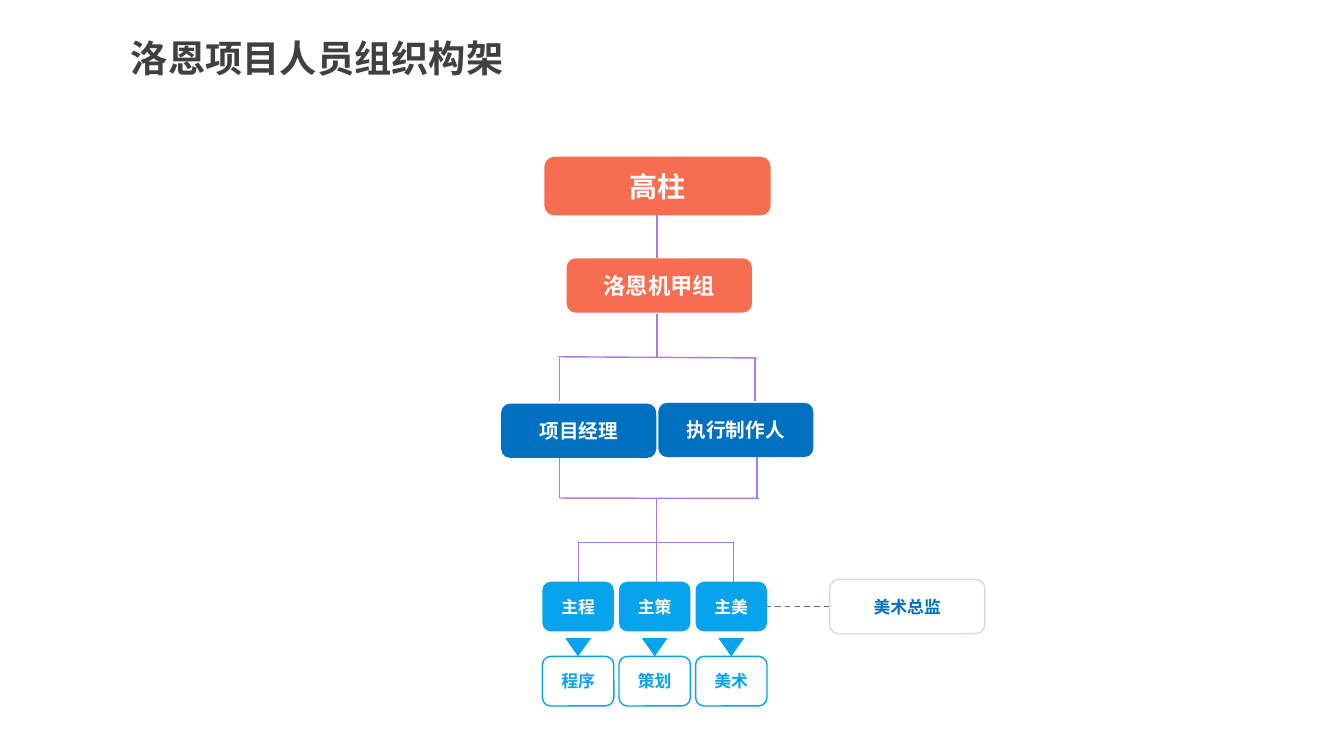
from lxml.etree import SubElement
from pptx import Presentation
from pptx.dml.color import RGBColor
from pptx.enum.dml import MSO_LINE
from pptx.enum.shapes import MSO_CONNECTOR, MSO_SHAPE
from pptx.enum.text import MSO_ANCHOR, PP_ALIGN
from pptx.oxml.ns import qn
from pptx.util import Cm, Pt

ORANGE, BLUE, SKY, PURPLE = "F66E4F", "0070C0", "08A3ED", "AD7AE1"
WHITE, GREY, STEEL, DARK = "FFFFFF", "D6DCE5", "43739E", "404040"


def color(hex_code):
    return RGBColor.from_string(hex_code)


def write(frame, text, size=12, ink=WHITE, font="Calibri", align=PP_ALIGN.CENTER):
    paragraph = frame.paragraphs[0]
    paragraph.alignment = align
    run = paragraph.add_run()
    run.text = text
    run.font.name = font
    run.font.size = Pt(size)
    run.font.bold = True
    run.font.color.rgb = color(ink)


class OrgChart:
    def __init__(self, slide):
        self.shapes = slide.shapes
        self.line_width = Pt(1)

    def paint(self, shape, fill=None, outline=None):
        shape.shadow.inherit = False
        if fill:
            shape.fill.solid()
            shape.fill.fore_color.rgb = color(fill)
        else:
            shape.fill.background()
        if outline:
            shape.line.color.rgb = color(outline)
            shape.line.width = self.line_width
        else:
            shape.line.fill.background()

    def title(self, text, left, top, width, height):
        frame = self.shapes.add_textbox(Cm(left), Cm(top), Cm(width), Cm(height)).text_frame
        frame.word_wrap = False
        write(frame, text, 26.6, DARK, "Noto Sans CJK SC", PP_ALIGN.LEFT)

    def box(self, text, left, top, width, height, fill=None, outline=None, **text_format):
        shape = self.shapes.add_shape(
            MSO_SHAPE.ROUNDED_RECTANGLE, Cm(left), Cm(top), Cm(width), Cm(height))
        self.paint(shape, fill, outline)
        frame = shape.text_frame
        frame.word_wrap = True
        frame.vertical_anchor = MSO_ANCHOR.MIDDLE
        frame.margin_left = frame.margin_right = 0
        write(frame, text, **text_format)

    def line(self, x1, y1, x2, y2, ink=PURPLE, dashed=False):
        link = self.shapes.add_connector(
            MSO_CONNECTOR.STRAIGHT, Cm(x1), Cm(y1), Cm(x2), Cm(y2))
        link.line.color.rgb = color(ink)
        link.line.width = self.line_width
        if dashed:
            link.line.dash_style = MSO_LINE.DASH
        SubElement(link._element.spPr, qn("a:effectLst"))

    def arrow(self, center, top, width, height):
        """Draw a solid triangle that points down."""
        outline = self.shapes.build_freeform(Cm(center - width / 2), Cm(top))
        outline.add_line_segments(
            [(Cm(center + width / 2), Cm(top)), (Cm(center), Cm(top + height))], close=True)
        self.paint(outline.convert_to_shape(), SKY)


def main():
    deck = Presentation()
    deck.slide_width, deck.slide_height = Cm(33.87), Cm(19.05)
    chart = OrgChart(deck.slides.add_slide(deck.slide_layouts[6]))

    chart.title("洛恩项目人员组织构架", 3.05, 0.76, 9.93, 1.4)

    # Trunk of the tree
    for x, top, bottom in [(16.56, 5.41, 6.5), (16.56, 7.9, 8.99), (16.54, 12.55, 13.67)]:
        chart.line(x, top, x, bottom)
    # Branches to the managers and back, then to the leads
    chart.line(14.07, 8.99, 19.08, 9.02)
    chart.line(14.12, 12.55, 19.13, 12.56)
    chart.line(14.58, 13.67, 18.49, 13.67)
    for x_above, x_below in [(14.1, 14.1), (19.03, 19.08)]:
        chart.line(x_above, 9.02, x_above, 10.11)
        chart.line(x_below, 11.46, x_below, 12.55)
    for x in (14.58, 16.54, 18.49):
        chart.line(x, 13.67, x, 14.76)
    chart.line(18.8, 15.29, 20.9, 15.29, STEEL, dashed=True)

    chart.box("高柱", 13.72, 3.95, 5.7, 1.48, ORANGE, size=20)
    chart.box("洛恩机甲组", 14.28, 6.51, 4.67, 1.37, ORANGE, size=16)
    chart.box("项目经理", 12.63, 10.17, 3.91, 1.37, BLUE, size=14)
    chart.box("执行制作人", 16.59, 10.15, 3.91, 1.37, BLUE, size=14)
    chart.box("美术总监", 20.91, 14.6, 3.91, 1.37, outline=GREY, ink=BLUE)

    team_left, team_pitch, team_width, team_height = 13.67, 1.93, 1.8, 1.25
    teams = [("主程", "程序"), ("主策", "策划"), ("主美", "美术")]
    for column, (lead, team) in enumerate(teams):
        left = team_left + column * team_pitch
        chart.box(lead, left, 14.66, team_width, team_height, SKY)
        chart.arrow(left + team_width / 2, 16.08, 0.65, 0.46)
        chart.box(team, left, 16.54, team_width, team_height, WHITE, SKY, ink=SKY)

    deck.save("out.pptx")


if __name__ == "__main__":
    main()
